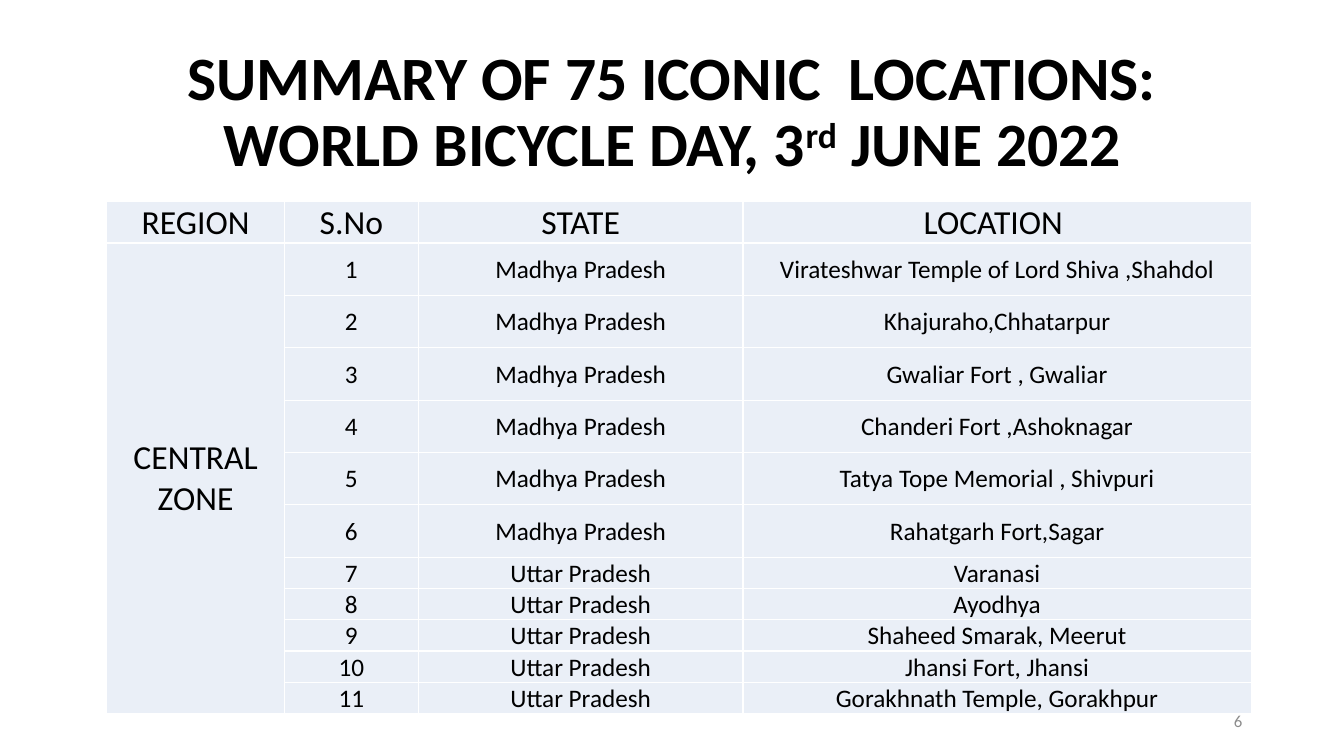
import pptx
import pptx.util
import pptx.dml.color
import pptx.enum.text
import pptx.oxml
import pptx.oxml.ns

Inches, Pt = pptx.util.Inches, pptx.util.Pt
ALIGN = pptx.enum.text.PP_ALIGN
MIDDLE = pptx.enum.text.MSO_ANCHOR.MIDDLE

TITLE = [("SUMMARY OF 75 ICONIC  LOCATIONS: WORLD BICYCLE DAY, 3", 0), ("rd", 30), (" JUNE 2022", 0)]
PAGE_NUMBER = "6"
HEADINGS = ["REGION", "S.No", "STATE", "LOCATION "]
REGION = "CENTRAL ZONE"
LOCATIONS = {
    "Madhya Pradesh": [
        "Virateshwar Temple of Lord Shiva ,Shahdol",
        "Khajuraho,Chhatarpur",
        "Gwaliar Fort , Gwaliar",
        "Chanderi Fort ,Ashoknagar",
        "Tatya Tope Memorial , Shivpuri",
        "Rahatgarh Fort,Sagar",
    ],
    "Uttar Pradesh": [
        "Varanasi",
        "Ayodhya",
        "Shaheed Smarak, Meerut",
        "Jhansi Fort, Jhansi",
        "Gorakhnath Temple, Gorakhpur",
    ],
}

SLIDE_SIZE = (13.33, 7.5)
TITLE_AREA = (0.92, 0.4, 11.5, 1.45)
NUMBER_AREA = (9.42, 6.95, 3, 0.4)
TABLE_CORNER = (1.06, 2)
COLUMN_WIDTHS = [1.76, 1.33, 3.22, 5.04]
HEADER_HEIGHT = 0.32
ROW_HEIGHTS = {"Madhya Pradesh": 0.52, "Uttar Pradesh": 0.26}
CELL_MARGINS = {"margin_left": 0.01, "margin_right": 0.01, "margin_top": 0.01, "margin_bottom": 0}
CELL_FILL, BORDER = "EAEFF7", "FFFFFF"

TITLE_FORMAT = {"size": Pt(44), "name": "Calibri", "bold": True}
HEADING_FORMAT = {"size": Pt(24), "name": "Calibri", "bold": False}
BODY_FORMAT = {"size": Pt(18), "name": "Calibri", "bold": False}
NUMBER_FORMAT = {"size": Pt(12), "name": "Calibri"}


def color(value):
    return pptx.dml.color.RGBColor.from_string(value)


def write(para, spans, text_format, ink="000000", align=ALIGN.CENTER):
    """Fill a paragraph with (text, raised percent) spans."""
    para.alignment = align
    for text, raised in spans:
        span = para.add_run()
        span.text = text
        for name, value in text_format.items():
            setattr(span.font, name, value)
        span.font.color.rgb = color(ink)
        if raised:
            span.font._element.set("baseline", str(raised * 1000))


def add_text(page, area, *content, **options):
    frame = page.shapes.add_textbox(*map(Inches, area)).text_frame
    frame.word_wrap = True
    frame.vertical_anchor = MIDDLE
    write(frame.paragraphs[0], *content, **options)
    return frame


def style_cell(cell):
    properties = cell._tc.get_or_add_tcPr()
    for side in ("lnL", "lnR", "lnT", "lnB"):
        properties.append(pptx.oxml.parse_xml(
            f'<a:{side} {pptx.oxml.ns.nsdecls("a")} w="{Pt(1)}"><a:solidFill>'
            f'<a:srgbClr val="{BORDER}"/></a:solidFill></a:{side}>'))
    cell.fill.solid()
    cell.fill.fore_color.rgb = color(CELL_FILL)
    cell.vertical_anchor = MIDDLE
    for name, value in CELL_MARGINS.items():
        setattr(cell, name, Inches(value))


def add_location_table(page):
    places = [(state, place) for state, group in LOCATIONS.items() for place in group]
    rows = [HEADINGS] + [
        [REGION if number == 1 else "", str(number), state, place]
        for number, (state, place) in enumerate(places, 1)]
    heights = [HEADER_HEIGHT] + [ROW_HEIGHTS[state] for state, _ in places]
    size = (sum(COLUMN_WIDTHS), sum(heights))
    table = page.shapes.add_table(
        len(rows), len(HEADINGS), *map(Inches, TABLE_CORNER + size)).table
    table.first_row = table.horz_banding = False
    for column, width in zip(table.columns, COLUMN_WIDTHS):
        column.width = Inches(width)
    for row, height in zip(table.rows, heights):
        row.height = Inches(height)
    for r, texts in enumerate(rows):
        for c, text in enumerate(texts):
            cell = table.cell(r, c)
            style_cell(cell)
            if text:
                text_format = HEADING_FORMAT if r == 0 or c == 0 else BODY_FORMAT
                write(cell.text_frame.paragraphs[0], [(text, 0)], text_format)
    table.cell(1, 0).merge(table.cell(len(rows) - 1, 0))


def main():
    deck = pptx.Presentation()
    deck.slide_width, deck.slide_height = map(Inches, SLIDE_SIZE)
    page = deck.slides.add_slide(deck.slide_layouts[6])
    title = add_text(page, TITLE_AREA, TITLE, TITLE_FORMAT)
    title.paragraphs[0].line_spacing = 0.9
    add_location_table(page)
    add_text(page, NUMBER_AREA, [(PAGE_NUMBER, 0)], NUMBER_FORMAT, ink="8C8C8C", align=ALIGN.RIGHT)
    deck.save("out.pptx")


if __name__ == "__main__":
    main()
